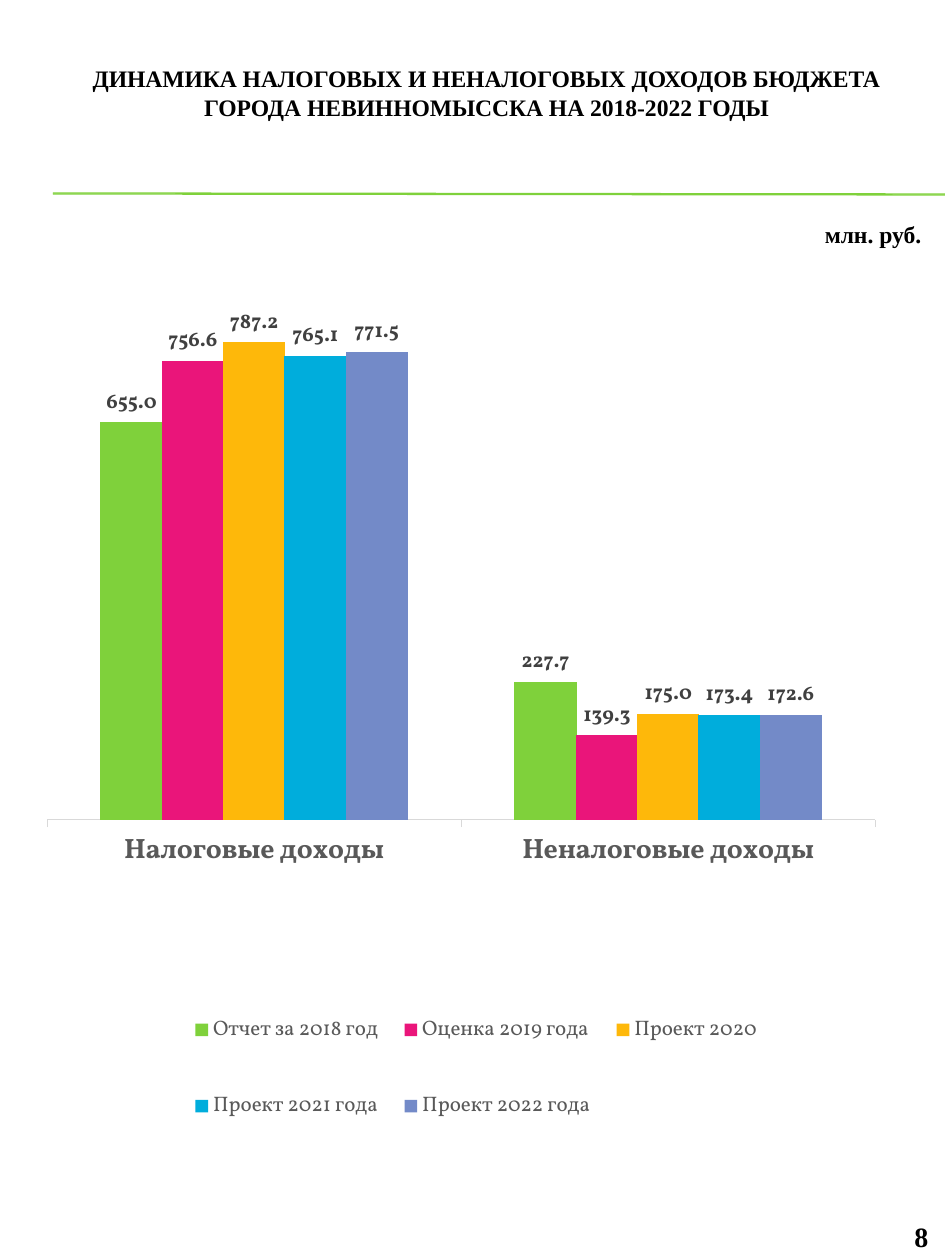
"""Build the slide on tax and non-tax revenue of the city budget, 2018-2022."""
from lxml import etree
from pptx import Presentation
from pptx import util as u
from pptx.chart.data import CategoryChartData
from pptx.dml.color import RGBColor
from pptx.enum import chart as ch, shapes, text
from pptx.oxml import parse_xml
from pptx.oxml.ns import nsdecls, qn

COLORS = {"black": "000000", "green": "7FD13B", "pink": "EA157A", "amber": "FEB80A",
          "cyan": "00ADDC", "indigo": "738AC8", "axis": "D9D9D9",
          "caption": "595959", "value": "404040"}
REVENUE = [
    ("Отчет за 2018 год", (655.0, 227.7), "green"),
    ("Оценка 2019 года", (756.6, 139.3), "pink"),
    ("Проект 2020", (787.2, 175.0), "amber"),
    ("Проект 2021 года", (765.1, 173.4), "cyan"),
    ("Проект 2022 года", (771.5, 172.6), "indigo"),
]
HEADINGS = [
    ("ДИНАМИКА НАЛОГОВЫХ И НЕНАЛОГОВЫХ ДОХОДОВ БЮДЖЕТА ГОРОДА НЕВИННОМЫССКА НА 2018-2022 ГОДЫ",
     (65, 58, 843, 82), 13.5, text.PP_ALIGN.CENTER, True),
    ("млн. руб.", (811, 214, 124, 41), 13.5, text.PP_ALIGN.CENTER, False),
    ("8", (902, 1213, 64, 46), 16, text.PP_ALIGN.LEFT, True),
]


def px(*lengths):
    return [u.Emu(round(n * 914400 / 126)) for n in lengths]


def style(font, face, size, color, bold):
    font.name, font.size, font.bold = face, u.Pt(size), bold
    font.color.rgb = RGBColor.from_string(COLORS[color])


deck = Presentation()
deck.slide_width, deck.slide_height = px(945, 1260)
slide = deck.slides.add_slide(deck.slide_layouts[6])

for top in (193, 194):
    rule = slide.shapes.add_connector(shapes.MSO_CONNECTOR.STRAIGHT, *px(53, top, 945, top + 1))
    rule.line.color.rgb = RGBColor.from_string(COLORS["green"])
    rule.line.width = u.Pt(0.75)
    etree.SubElement(rule._element.spPr, qn("a:effectLst"))

for words, box, size, align, wrap in HEADINGS:
    heading = slide.shapes.add_textbox(*px(*box)).text_frame
    heading.word_wrap = wrap
    line = heading.paragraphs[0]
    line.text, line.alignment = words, align
    style(line.font, "Times New Roman", size, "black", True)

revenue = CategoryChartData(number_format="0.0")
revenue.categories = ["Налоговые доходы", "Неналоговые доходы"]
for name, amounts, color in REVENUE:
    revenue.add_series(name, amounts)
chart = slide.shapes.add_chart(ch.XL_CHART_TYPE.COLUMN_CLUSTERED,
                               *px(26, 255, 883, 951), revenue).chart
chart.has_title = False
style(chart.font, "Vollkorn", 10, "black", False)

columns = chart.plots[0]
columns.gap_width, columns.overlap, columns.vary_by_categories = 170, 2, False
for series, (name, amounts, color) in zip(columns.series, REVENUE):
    series.format.fill.solid()
    series.format.fill.fore_color.rgb = RGBColor.from_string(COLORS[color])
    labels = series.data_labels
    labels.show_value = True
    labels.position = ch.XL_LABEL_POSITION.OUTSIDE_END
    labels.number_format, labels.number_format_is_linked = "0.0", False
    style(labels.font, "Vollkorn", 12, "value", True)

kinds = chart.category_axis
kinds.major_tick_mark = ch.XL_TICK_MARK.OUTSIDE
kinds.format.line.color.rgb = RGBColor.from_string(COLORS["axis"])
kinds.format.line.width = u.Pt(0.75)
style(kinds.tick_labels.font, "Vollkorn", 16, "caption", True)

amount_axis = chart.value_axis
amount_axis.minimum_scale, amount_axis.maximum_scale = 0, 900
amount_axis.has_major_gridlines = False
amount_axis.tick_labels.number_format = "0.0"
amount_axis.tick_labels.number_format_is_linked = False
amount_axis.visible = False

chart.has_legend = True
legend = chart.legend
legend.position = ch.XL_LEGEND_POSITION.BOTTOM
legend.include_in_layout = False
style(legend.font, "Vollkorn", 12, "caption", False)

plot_area = chart._chartSpace.chart.plotArea
for old in plot_area.findall(qn("c:layout")) + legend._element.findall(qn("c:layout")):
    old.getparent().remove(old)
for parent, index, target, frame in (
        (plot_area, 0, '<c:layoutTarget val="inner"/>', (0.024, 0.02, 0.938, 0.574)),
        (legend._element, 1, "", (0.17, 0.75, 0.68, 0.21))):
    sizes = "".join(f'<c:{tag} val="{share}"/>' for tag, share in zip("xywh", frame))
    parent.insert(index, parse_xml(
        f'<c:layout {nsdecls("c")}><c:manualLayout>{target}'
        f'<c:xMode val="edge"/><c:yMode val="edge"/>{sizes}</c:manualLayout></c:layout>'))

deck.save("out.pptx")
